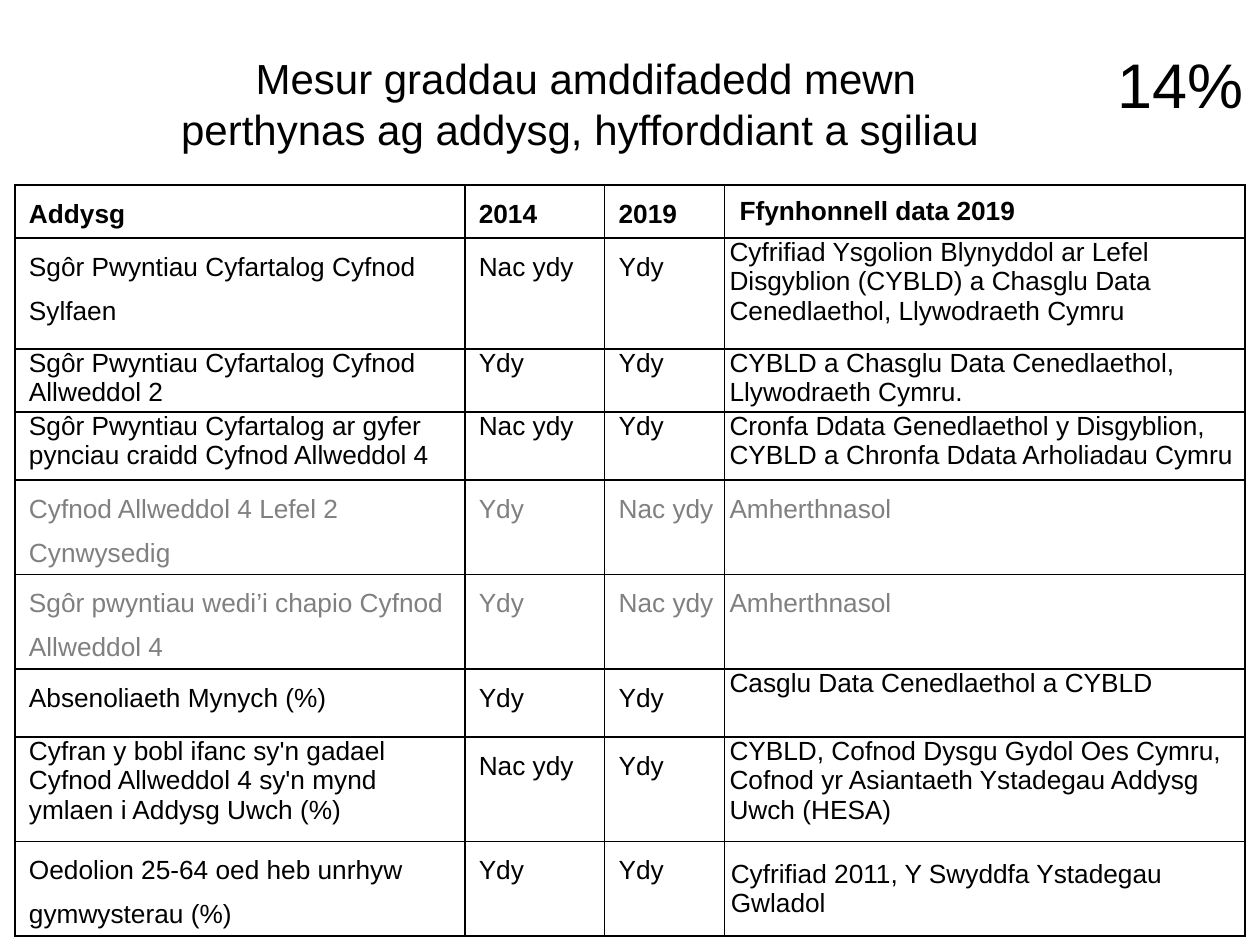
from dataclasses import dataclass

import pptx
import pptx.dml.color
import pptx.enum.text
import pptx.oxml
import pptx.oxml.ns
import pptx.util
from pptx.enum.text import MSO_ANCHOR, MSO_AUTO_SIZE, PP_ALIGN

SLIDE_WIDTH = pptx.util.Inches(10)
SLIDE_HEIGHT = pptx.util.Inches(7.5)
FONT = "Arial"
COLOURS = {"ink": "000000", "dropped": "808080"}
COLUMN_SHARES = (35.7, 11.1, 9.5, 41.3)
SOURCE_COLUMN = len(COLUMN_SHARES) - 1


@dataclass
class Frame:
    """A box in percent of the slide's width and height."""
    left: float
    top: float
    width: float
    height: float

    def lengths(self) -> tuple[int, int, int, int]:
        return across(self.left), down(self.top), across(self.width), down(self.height)


@dataclass
class Measure:
    """A table row; loose columns have 1.5 line spacing."""
    height: float
    texts: tuple[str, str, str, str]
    loose: range = range(0, 3)
    colour: str = "ink"
    bold: bool = False
    source_anchor: MSO_ANCHOR = MSO_ANCHOR.TOP
    source_margin: float = 0


MEASURES = (
    Measure(5.6, ("Addysg", "2014", "2019", "Ffynhonnell data 2019"),
            bold=True, source_anchor=MSO_ANCHOR.MIDDLE, source_margin=0.08),
    Measure(11.73, ("Sgôr Pwyntiau Cyfartalog Cyfnod Sylfaen", "Nac ydy", "Ydy",
                    "Cyfrifiad Ysgolion Blynyddol ar Lefel Disgyblion (CYBLD) a Chasglu "
                    "Data Cenedlaethol, Llywodraeth Cymru")),
    Measure(6.53, ("Sgôr Pwyntiau Cyfartalog Cyfnod Allweddol 2", "Ydy", "Ydy",
                   "CYBLD a Chasglu Data Cenedlaethol, Llywodraeth Cymru."),
            loose=range(0)),
    Measure(7.2, ("Sgôr Pwyntiau Cyfartalog ar gyfer pynciau craidd Cyfnod Allweddol 4",
                  "Nac ydy", "Ydy",
                  "Cronfa Ddata Genedlaethol y Disgyblion, CYBLD a Chronfa Ddata "
                  "Arholiadau Cymru"),
            loose=range(0)),
    Measure(9.87, ("Cyfnod Allweddol 4 Lefel 2 Cynwysedig", "Ydy", "Nac ydy",
                   "Amherthnasol"), loose=range(4), colour="dropped"),
    Measure(9.87, ("Sgôr pwyntiau wedi’i chapio Cyfnod Allweddol 4", "Ydy", "Nac ydy",
                   "Amherthnasol"), loose=range(4), colour="dropped"),
    Measure(7.2, ("Absenoliaeth Mynych (%)", "Ydy", "Ydy",
                  "Casglu Data Cenedlaethol a CYBLD")),
    Measure(11.07, ("Cyfran y bobl ifanc sy'n gadael Cyfnod Allweddol 4 sy'n mynd "
                    "ymlaen i Addysg Uwch (%)", "Nac ydy", "Ydy",
                    "CYBLD, Cofnod Dysgu Gydol Oes Cymru, Cofnod yr Asiantaeth "
                    "Ystadegau Addysg Uwch (HESA)"), loose=range(1, 3)),
    Measure(9.87, ("Oedolion 25-64 oed heb unrhyw gymwysterau (%)", "Ydy", "Ydy",
                   "Cyfrifiad 2011, Y Swyddfa Ystadegau Gwladol"),
            source_anchor=MSO_ANCHOR.MIDDLE, source_margin=0.01),
)


def across(percent: float) -> int:
    return round(SLIDE_WIDTH * percent / 100)


def down(percent: float) -> int:
    return round(SLIDE_HEIGHT * percent / 100)


def format_spans(para, size: float, colour: str = "ink", bold: bool = False) -> None:
    for span in para.runs:
        span.font.name = FONT
        span.font.size = pptx.util.Pt(size)
        span.font.bold = bold
        span.font.color.rgb = pptx.dml.color.RGBColor.from_string(COLOURS[colour])


def fill_box(box, frame: Frame, text: str, size: float, align: PP_ALIGN) -> None:
    box.left, box.top, box.width, box.height = frame.lengths()
    text_frame = box.text_frame
    text_frame.text = text
    text_frame.word_wrap = True
    text_frame.auto_size = MSO_AUTO_SIZE.SHAPE_TO_FIT_TEXT
    text_frame.vertical_anchor = MSO_ANCHOR.TOP
    para = text_frame.paragraphs[0]
    para.alignment = align
    format_spans(para, size)


def rule_cell(cell) -> None:
    """Draw a thin line on all four sides and leave the cell unfilled."""
    properties = cell._tc.get_or_add_tcPr()
    for side in ("lnL", "lnR", "lnT", "lnB"):
        properties.append(pptx.oxml.parse_xml(
            f'<a:{side} {pptx.oxml.ns.nsdecls("a")} w="{pptx.util.Pt(1)}"><a:solidFill>'
            f'<a:srgbClr val="{COLOURS["ink"]}"/></a:solidFill></a:{side}>'))
    cell.fill.background()


def fill_cell(cell, measure: Measure, column: int) -> None:
    is_source = column == SOURCE_COLUMN
    margin = pptx.util.Inches(measure.source_margin if is_source else 0.07)
    cell.margin_left = cell.margin_right = margin
    cell.margin_top = cell.margin_bottom = 0
    cell.vertical_anchor = measure.source_anchor if is_source else MSO_ANCHOR.TOP
    cell.text_frame.text = measure.texts[column]
    para = cell.text_frame.paragraphs[0]
    para._p.get_or_add_pPr().set("marL", str(pptx.util.Inches(0.04)))
    para.line_spacing = 1.5 if column in measure.loose else 1.0
    format_spans(para, 15, measure.colour, measure.bold)
    rule_cell(cell)


def add_measures(slide) -> None:
    frame = Frame(1.2, 19.6, sum(COLUMN_SHARES), sum(m.height for m in MEASURES))
    table = slide.shapes.add_table(
        len(MEASURES), len(COLUMN_SHARES), *frame.lengths()).table
    table.first_row = table.horz_banding = False
    for column, share in enumerate(COLUMN_SHARES):
        table.columns[column].width = across(share)
    for row, measure in enumerate(MEASURES):
        table.rows[row].height = down(measure.height)
        for column in range(len(COLUMN_SHARES)):
            fill_cell(table.cell(row, column), measure, column)


def main() -> None:
    deck = pptx.Presentation()
    deck.slide_width, deck.slide_height = SLIDE_WIDTH, SLIDE_HEIGHT
    slide = deck.slides.add_slide(deck.slide_layouts.get_by_name("Title Only"))
    fill_box(slide.shapes.title, Frame(12.2, 4.93, 68.6, 12.13),
             "Mesur graddau amddifadedd mewn perthynas ag addysg, hyfforddiant a sgiliau ",
             24, PP_ALIGN.CENTER)
    add_measures(slide)
    weight_frame = Frame(87.7, 4.13, 12.3, 9.47)
    fill_box(slide.shapes.add_textbox(*weight_frame.lengths()), weight_frame,
             "14%", 36, PP_ALIGN.LEFT)
    deck.save("out.pptx")


if __name__ == "__main__":
    main()
